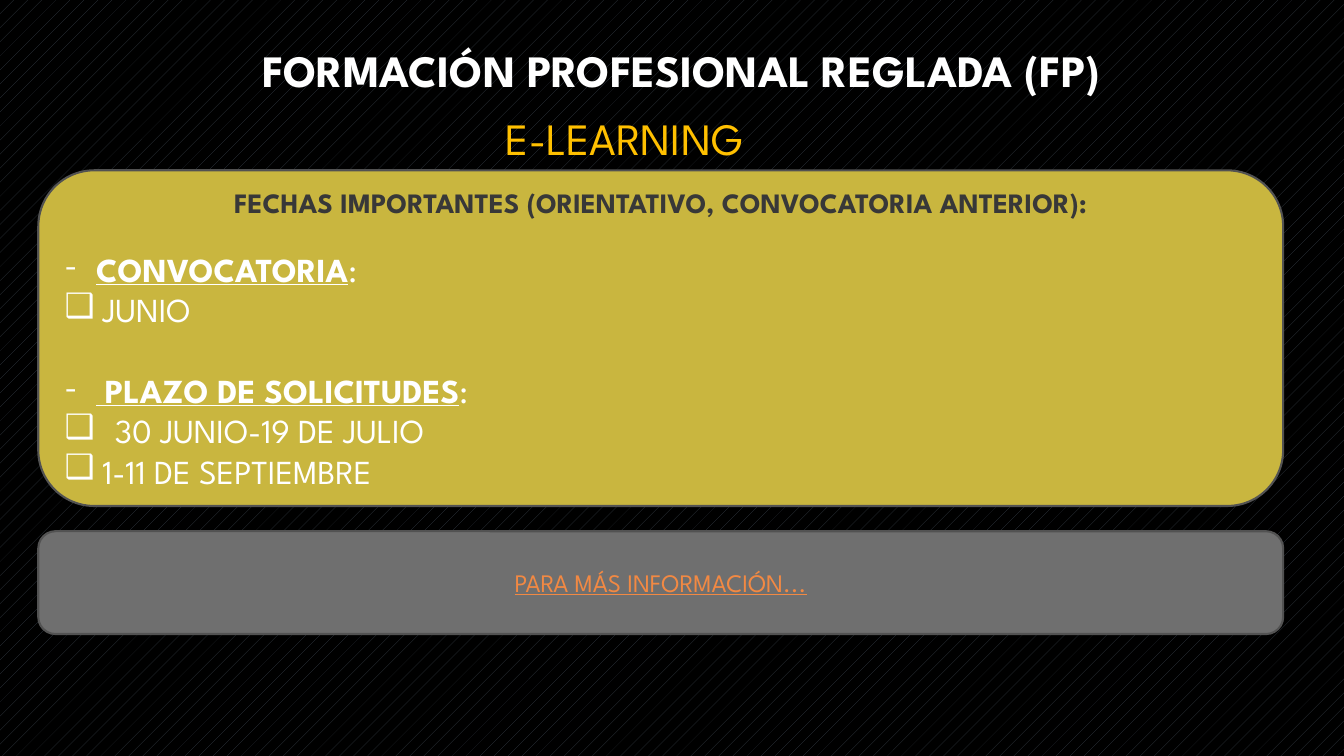
import pptx
import pptx.dml.color
import pptx.enum.dml
import pptx.enum.shapes
import pptx.enum.text
import pptx.oxml
import pptx.oxml.ns
import pptx.util

Pt = pptx.util.Pt
ALIGN = pptx.enum.text.PP_ALIGN
MIDDLE = pptx.enum.text.MSO_ANCHOR.MIDDLE
FONT = "League Spartan"
WHITE = "FFFFFF"
PANEL_LEFT, PANEL_WIDTH = 27.36, 889.2


def colour(hex_string):
    return pptx.dml.color.RGBColor.from_string(hex_string)


def style_run(run, size, hex_colour, bold=False, underline=False):
    run.font.name = FONT
    run.font.size = Pt(size)
    run.font.bold = bold
    run.font.underline = underline
    run.font.color.rgb = colour(hex_colour)


def set_line(paragraph, text, size, hex_colour, align=ALIGN.CENTER, **style):
    paragraph.text = text
    paragraph.alignment = align
    style_run(paragraph.runs[0], size, hex_colour, **style)


def add_heading(slide, box, text, hex_colour, align, bold, wrap):
    heading = slide.shapes.add_textbox(*map(Pt, box))
    frame = heading.text_frame
    frame.word_wrap = wrap
    frame.vertical_anchor = MIDDLE if wrap else pptx.enum.text.MSO_ANCHOR.TOP
    set_line(frame.paragraphs[0], text, 32, hex_colour, align, bold=bold)


def add_panel(slide, top, height, fill):
    panel = slide.shapes.add_shape(
        pptx.enum.shapes.MSO_SHAPE.ROUNDED_RECTANGLE,
        Pt(PANEL_LEFT), Pt(top), Pt(PANEL_WIDTH), Pt(height))
    panel.shadow.inherit = False
    panel.fill.solid()
    panel.fill.fore_color.rgb = colour(fill)
    panel.line.color.rgb = colour("525252")
    panel.line.width = Pt(1.5)
    panel.text_frame.word_wrap = True
    panel.text_frame.vertical_anchor = MIDDLE
    return panel.text_frame


def add_bullet(paragraph, character, hanging):
    properties = paragraph._p.get_or_add_pPr()
    properties.set("marL", str(Pt(hanging)))
    properties.set("indent", str(-Pt(hanging)))
    namespace = pptx.oxml.ns.nsdecls("a")
    properties.append(pptx.oxml.parse_xml(
        f'<a:buFont {namespace} typeface="{"Wingdings" if character == "q" else FONT}"/>'))
    properties.append(pptx.oxml.parse_xml(
        f'<a:buChar {namespace} char="{character}"/>'))


def add_topic(frame, title, gap, dates):
    """Underlined topic followed by its dates, each with its own indent."""
    topic = frame.add_paragraph()
    set_line(topic, title, 24, WHITE, ALIGN.LEFT, bold=True, underline=True)
    colon = topic.add_run()
    colon.text = ":"
    style_run(colon, 24, WHITE)
    topic.space_before = Pt(gap)
    add_bullet(topic, "-", 22.5)
    for text, hanging in dates:
        date = frame.add_paragraph()
        set_line(date, text, 24, WHITE, ALIGN.LEFT)
        add_bullet(date, "❑", hanging)


def main():
    presentation = pptx.Presentation()
    presentation.slide_width = Pt(960)
    presentation.slide_height = Pt(540)
    slide = presentation.slides.add_slide(presentation.slide_layouts[6])

    # Patterned background
    background = slide.background.fill
    background.patterned()
    background.pattern = pptx.enum.dml.MSO_PATTERN.PERCENT_5
    background.fore_color.rgb = colour("363D46")
    background.back_color.rgb = colour("000000")

    # Headings
    add_heading(slide, (97.2, 16.56, 779.76, 66.96),
                "FORMACIÓN PROFESIONAL REGLADA (FP)", WHITE, ALIGN.CENTER, True, True)
    add_heading(slide, (354.24, 75.6, 201.6, 46.08),
                "E-LEARNING", "FFC000", ALIGN.LEFT, False, False)

    # Important dates
    dates = add_panel(slide, 121.68, 239.76, "C9B63F")
    set_line(dates.paragraphs[0],
             "FECHAS IMPORTANTES (ORIENTATIVO, CONVOCATORIA ANTERIOR):",
             20, "383838", bold=True)
    add_topic(dates, "CONVOCATORIA", 21, [("JUNIO", 27)])
    add_topic(dates, " PLAZO DE SOLICITUDES", 29,
              [("30 JUNIO-19 DE JULIO", 36), ("1-11 DE SEPTIEMBRE", 27)])

    # Further information
    information = add_panel(slide, 379.44, 73.44, "6F6F6F")
    set_line(information.paragraphs[0], "PARA MÁS INFORMACIÓN...",
             18, "F28943", underline=True)

    presentation.save("out.pptx")


if __name__ == "__main__":
    main()
